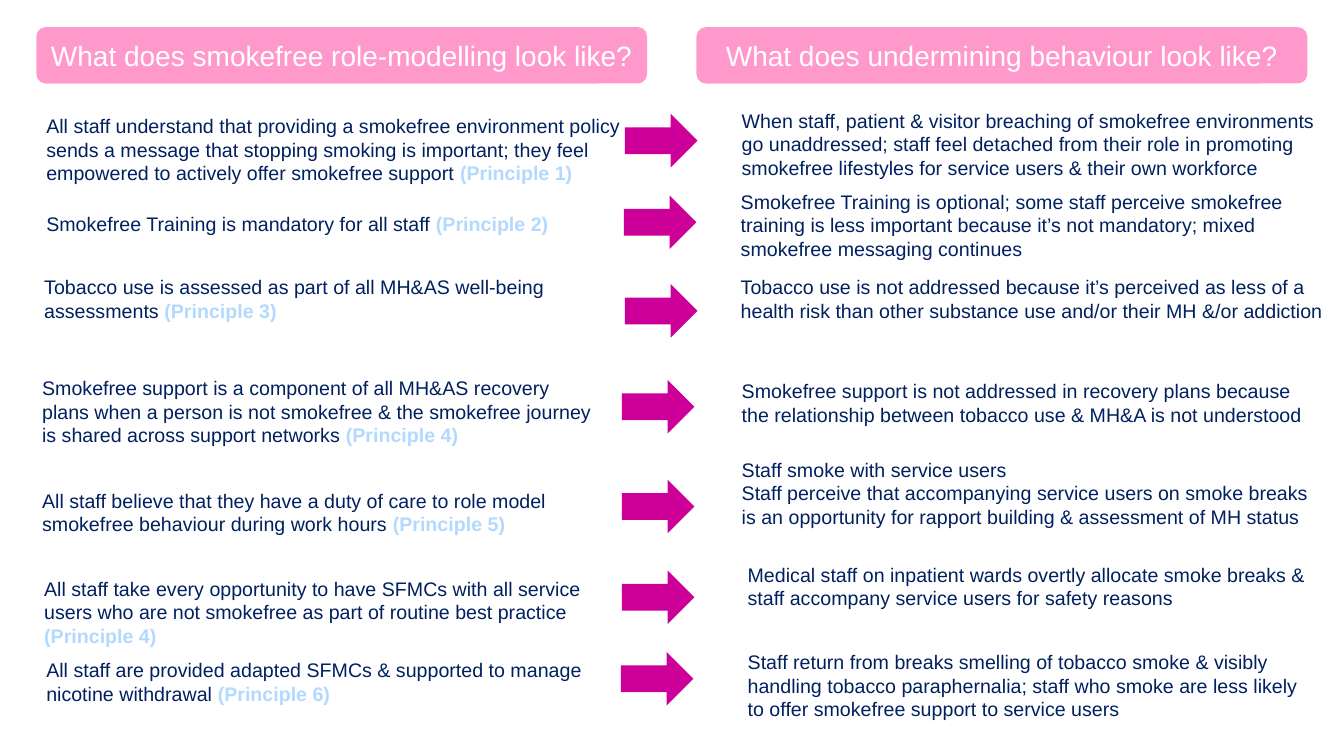
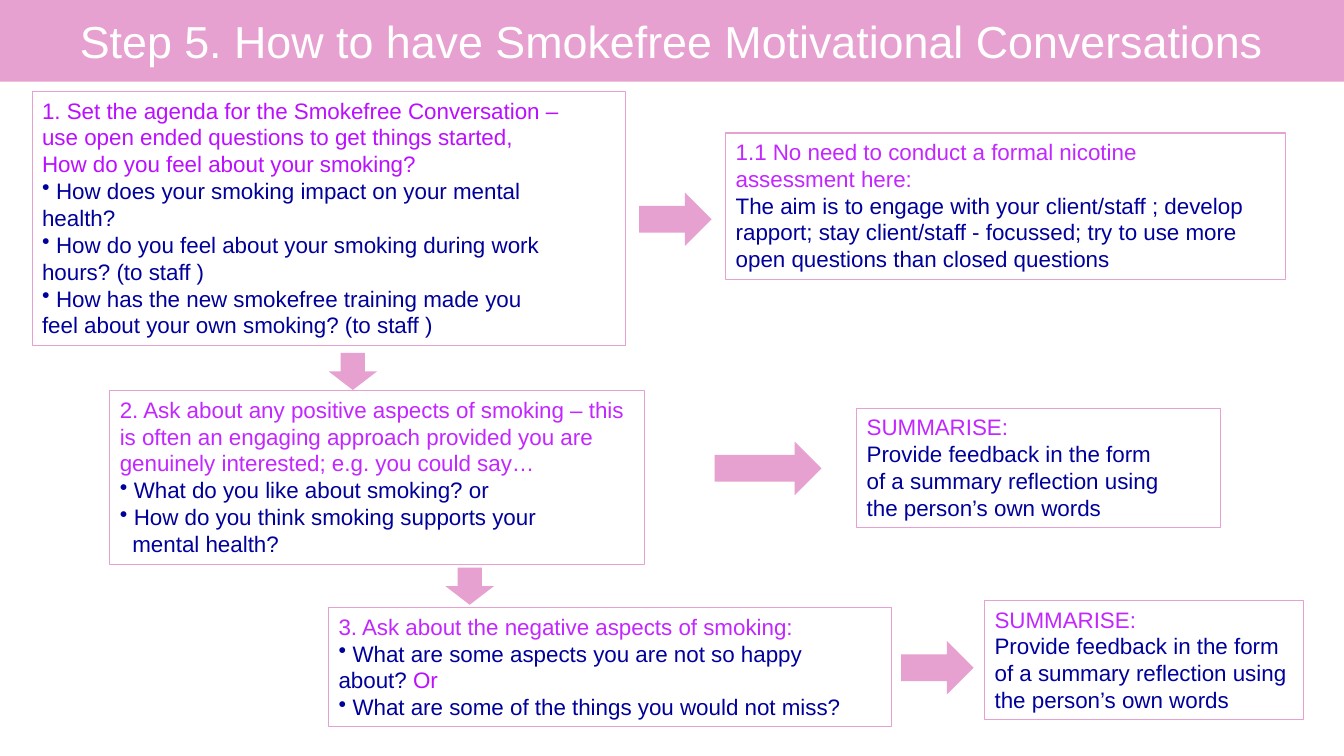
from lxml import etree
from pptx import Presentation
from pptx.dml.color import RGBColor
from pptx.enum.shapes import MSO_SHAPE
from pptx.enum.text import MSO_ANCHOR, MSO_AUTO_SIZE, PP_ALIGN
from pptx.oxml.ns import qn
from pptx.util import Pt

RECTANGLE = MSO_SHAPE.RECTANGLE
ROUNDED = MSO_SHAPE.ROUNDED_RECTANGLE
RIGHT_ARROW = MSO_SHAPE.RIGHT_ARROW
DOWN_ARROW = MSO_SHAPE.DOWN_ARROW
MIDDLE = MSO_ANCHOR.MIDDLE
CENTER = PP_ALIGN.CENTER
GROW = MSO_AUTO_SIZE.SHAPE_TO_FIT_TEXT

FONT = "Arial"
WHITE = RGBColor(0xFF, 0xFF, 0xFF)
BANNER_PINK = RGBColor(0xFF, 0x99, 0xCC)
MAGENTA = RGBColor(0xCC, 0x00, 0x99)
ORCHID = RGBColor(0xE7, 0xA1, 0xD0)
NAVY = RGBColor(0x00, 0x20, 0x60)
PALE_BLUE = RGBColor(0xB3, 0xD9, 0xFF)
DARK_BLUE = RGBColor(0x00, 0x00, 0x9A)
VIOLET = RGBColor(0xBB, 0x0F, 0xFF)
PURPLE = RGBColor(0xC2, 0x27, 0xFF)

BULLET_INDENT = 10
ARROW_W, ARROW_H = 51.8, 38.2
DOWN_W, DOWN_H = 34.6, 26.6


def add_block(slide, kind, box, fill, title="", size=20):
    block = slide.shapes.add_shape(kind, *map(Pt, box))
    block.shadow.inherit = False
    block.fill.solid()
    block.fill.fore_color.rgb = fill
    block.line.fill.background()
    if title:
        block.text_frame.vertical_anchor = MIDDLE
        paragraph = block.text_frame.paragraphs[0]
        paragraph.text = title
        paragraph.alignment = CENTER
        paragraph.font.name = FONT
        paragraph.font.size = Pt(size)
        paragraph.font.color.rgb = WHITE


def add_text(slide, box, lines, size):
    panel = slide.shapes.add_textbox(*map(Pt, box))
    frame = panel.text_frame
    frame.word_wrap = True
    frame.auto_size = GROW
    for index, (line, color) in enumerate(lines):
        paragraph = frame.add_paragraph() if index else frame.paragraphs[0]
        paragraph.text = line.removeprefix("• ")
        paragraph.font.name = FONT
        paragraph.font.size = Pt(size)
        paragraph.font.color.rgb = color
        if line.startswith("• "):
            properties = paragraph._p.get_or_add_pPr()
            properties.set("marL", str(Pt(BULLET_INDENT)))
            properties.set("indent", str(-Pt(BULLET_INDENT)))
            bullet_color = etree.Element(qn("a:buClr"))
            etree.SubElement(bullet_color, qn("a:srgbClr")).set("val", str(color))
            bullet = etree.Element(qn("a:buChar"))
            bullet.set("char", "•")
            properties.insert(0, bullet_color)
            properties.insert(1, bullet)
    return panel


prs = Presentation()
prs.slide_width = Pt(960)
prs.slide_height = Pt(540)
blank = prs.slide_layouts[6]

comparison = prs.slides.add_slide(blank)
for left, heading in (
    (26, "What does smokefree role-modelling look like?"),
    (497.5, "What does undermining behaviour look like?"),
):
    add_block(comparison, ROUNDED, (left, 19.4, 436.3, 40.3), BANNER_PINK, heading)

role_modelling = [
    ((26, 77.8, 438.5, 58.3), 1,
     "All staff understand that providing a smokefree environment policy sends a message "
     "that stopping smoking is important; they feel empowered to actively offer smokefree support "),
    ((26, 147.6, 438.5, 24.2), 2,
     "Smokefree Training is mandatory for all staff "),
    ((24.5, 193, 438.5, 41.2), 3,
     "Tobacco use is assessed as part of all MH&AS well-being assessments "),
    ((23, 265, 409, 58.3), 4,
     "Smokefree support is a component of all MH&AS recovery plans when a person is not "
     "smokefree & the smokefree journey is shared across support networks "),
    ((23, 345.6, 438.5, 41.2), 5,
     "All staff believe that they have a duty of care to role model smokefree behaviour "
     "during work hours "),
    ((24.5, 408.2, 398.2, 58.3), 4,
     "All staff take every opportunity to have SFMCs with all service users who are not "
     "smokefree as part of routine best practice "),
    ((26, 466.6, 436.3, 41.2), 6,
     "All staff are provided adapted SFMCs & supported to manage nicotine withdrawal "),
]
for box, principle, behaviour in role_modelling:
    statement = add_text(comparison, box, [(behaviour, NAVY)], 14)
    reference = statement.text_frame.paragraphs[0].add_run()
    reference.text = f"(Principle {principle})"
    reference.font.bold = True
    reference.font.color.rgb = PALE_BLUE

undermining = [
    ((522.7, 74.2, 424, 58.3), [
        "When staff, patient & visitor breaching of smokefree environments go unaddressed; "
        "staff feel detached from their role in promoting smokefree lifestyles for service "
        "users & their own workforce"]),
    ((522, 131.8, 414, 58.3), [
        "Smokefree Training is optional; some staff perceive smokefree training is less "
        "important because it’s not mandatory; mixed smokefree messaging continues"]),
    ((522, 193, 438.5, 41.2), [
        "Tobacco use is not addressed because it’s perceived as less of a health risk than "
        "other substance use and/or their MH &/or addiction"]),
    ((522.7, 267.1, 425.5, 41.2), [
        "Smokefree support is not addressed in recovery plans because the relationship "
        "between tobacco use & MH&A is not understood"]),
    ((522.7, 323.3, 426.2, 58.3), [
        "Staff smoke with service users",
        "Staff perceive that accompanying service users on smoke breaks is an opportunity "
        "for rapport building & assessment of MH status"]),
    ((527, 398.2, 417.6, 41.2), [
        "Medical staff on inpatient wards overtly allocate smoke breaks & staff accompany "
        "service users for safety reasons"]),
    ((527, 460.8, 409, 58.3), [
        "Staff return from breaks smelling of tobacco smoke & visibly handling tobacco "
        "paraphernalia; staff who smoke are less likely to offer smokefree support to "
        "service users"]),
]
for box, behaviours in undermining:
    add_text(comparison, box, [(behaviour, NAVY) for behaviour in behaviours], 14)

for left, top in (
    (446.4, 81.4), (445.7, 139.7), (446.4, 203), (444.2, 271.4),
    (444.2, 342.7), (444.2, 407.5), (443.5, 465.8),
):
    add_block(comparison, RIGHT_ARROW, (left, top, ARROW_W, ARROW_H), MAGENTA)

conversation = prs.slides.add_slide(blank)
add_block(conversation, RECTANGLE, (0, 0, 960, 58.3), ORCHID,
          "Step 5. How to have Smokefree Motivational Conversations", 32)

summary = (
    ["SUMMARISE:"],
    ["Provide feedback in the form", "of a summary reflection using", "the person’s own words"],
)
steps = [
    ((23, 65.5, 424, 181.4), VIOLET,
     ["1. Set the agenda for the Smokefree Conversation –",
      "use open ended questions to get things started,",
      "How do you feel about your smoking?"],
     ["• How does your smoking impact on your mental",
      "health?",
      "• How do you feel about your smoking during work",
      "hours? (to staff )",
      "• How has the new smokefree training made you",
      "feel about your own smoking? (to staff )"]),
    ((518.4, 95, 399.6, 104.4), PURPLE,
     ["1.1 No need to conduct a formal nicotine", "assessment here:"],
     ["The aim is to engage with your client/staff ; develop",
      "rapport; stay client/staff - focussed; try to use more",
      "open questions than closed questions"]),
    ((78.5, 279.2, 381.6, 123.8), PURPLE,
     ["2. Ask about any positive aspects of smoking – this",
      "is often an engaging approach provided you are",
      "genuinely interested; e.g. you could say…"],
     ["• What do you like about smoking? or",
      "• How do you think smoking supports your",
      "mental health?"]),
    ((612, 291.6, 260, 85), PURPLE, *summary),
    ((234.7, 434.2, 401.8, 85), PURPLE,
     ["3. Ask about the negative aspects of smoking:"],
     ["• What are some aspects you are not so happy",
      "about? ",
      "• What are some of the things you would not miss?"]),
    ((703.4, 429.1, 227.5, 85), PURPLE, *summary),
]
for box, heading_color, headings, prompts in steps:
    lines = [(heading, heading_color) for heading in headings]
    lines += [(prompt, DARK_BLUE) for prompt in prompts]
    step = add_text(conversation, box, lines, 16)
    step.line.color.rgb = ORCHID
    step.line.width = Pt(0.75)
    for paragraph in step.text_frame.paragraphs:
        if paragraph.text == "about? ":
            alternative = paragraph.add_run()
            alternative.text = "Or"
            alternative.font.color.rgb = VIOLET
        elif paragraph.text == "mental health?":
            paragraph._p.get_or_add_pPr().set("marL", str(Pt(9)))

for kind, box in (
    (RIGHT_ARROW, (510.5, 315.4, 76.3, ARROW_H)),
    (RIGHT_ARROW, (456.5, 137.5, ARROW_W, ARROW_H)),
    (DOWN_ARROW, (234.7, 252, DOWN_W, DOWN_H)),
    (DOWN_ARROW, (318.2, 405.4, DOWN_W, DOWN_H)),
    (RIGHT_ARROW, (643.7, 457.9, ARROW_W, ARROW_H)),
):
    add_block(conversation, kind, box, ORCHID)

prs.save("out.pptx")
